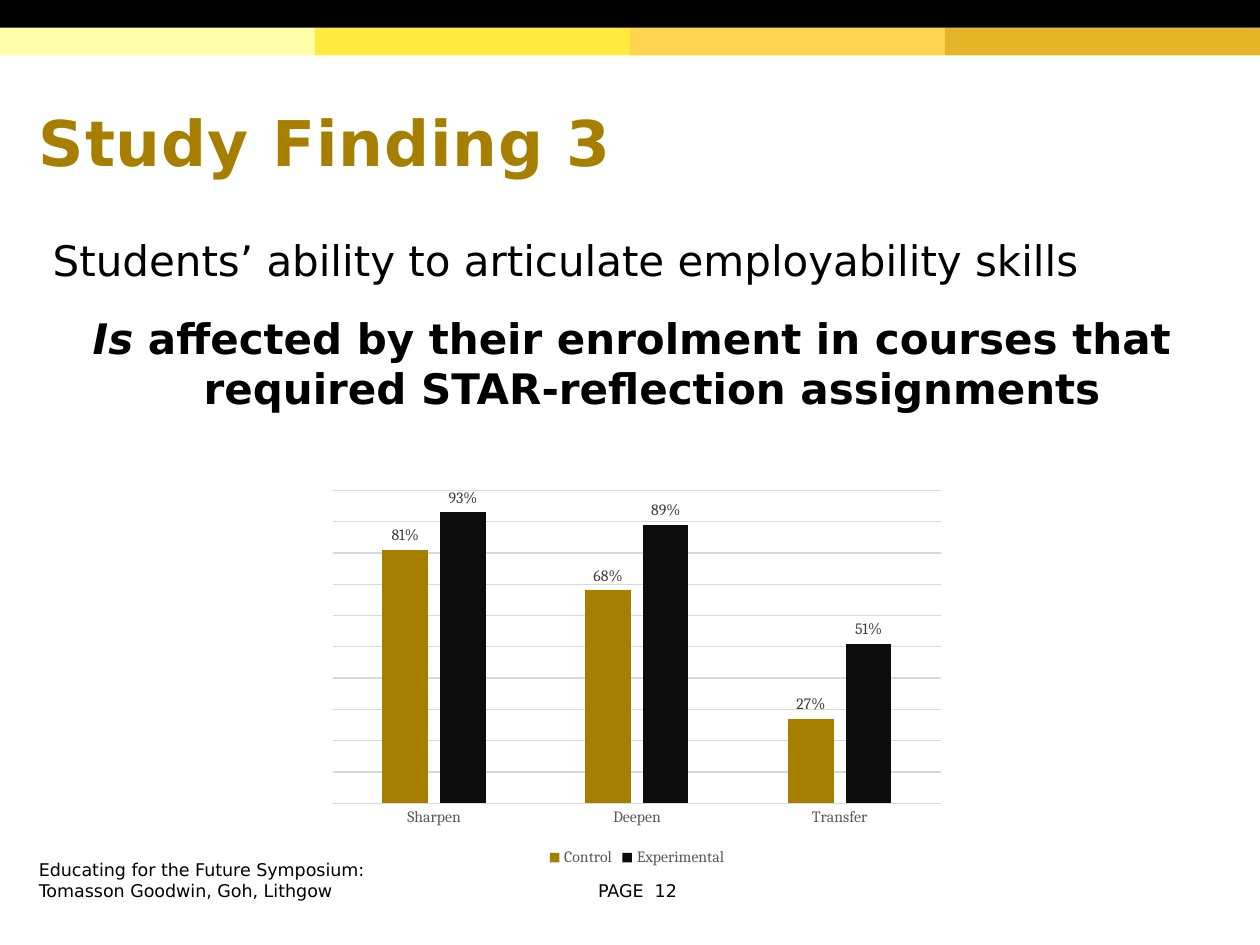
import pptx
import pptx.util
import pptx.chart.data
import pptx.dml.color
import pptx.enum.chart
import pptx.enum.shapes
import pptx.enum.text

# Content
TITLE = "Study Finding 3"
LEAD = "Students’ ability to articulate employability skills"
FINDING = ("Is", " affected by their enrolment in courses that "
           "required STAR-reflection assignments")
FOOTER = "Educating for the Future Symposium:\nTomasson Goodwin, Goh, Lithgow"
PAGE = "PAGE  12"
CATEGORIES = ["Sharpen", "Deepen", "Transfer"]
SERIES = [("Control", [0.81, 0.68, 0.27], "gold"),
          ("Experimental", [0.93, 0.89, 0.51], "ink")]
BANDS = ["band1", "band2", "band3", "band4"]
COLORS = {"black": "000000", "gold": "A77F00", "ink": "0C0C0C",
          "grid": "D9D9D9", "axis": "595959", "label": "404040",
          "band1": "FFFFAA", "band2": "FFEA3D",
          "band3": "FFD54F", "band4": "E4B429"}
FONT, CHART_FONT = "DejaVu Sans", "Cambria"
W, H, BAND = 10, 7.5, 0.22

Inches, Pt = pptx.util.Inches, pptx.util.Pt
ANCHOR = pptx.enum.text.MSO_ANCHOR
CENTER = pptx.enum.text.PP_ALIGN.CENTER
XL = pptx.enum.chart


def rgb(name):
    return pptx.dml.color.RGBColor.from_string(COLORS[name])


def style(font, size, color="black", name=FONT, bold=None):
    font.size, font.name, font.bold = Pt(size), name, bold
    font.color.rgb = rgb(color)


def bar(s, left, top, width, color):
    sp = s.shapes.add_shape(pptx.enum.shapes.MSO_SHAPE.RECTANGLE,
                            *map(Inches, (left, top, width, BAND)))
    sp.shadow.inherit = False
    sp.fill.solid()
    sp.fill.fore_color.rgb = rgb(color)
    sp.line.fill.background()


def text_box(s, box, text, size, color="black", bold=None,
             anchor=ANCHOR.MIDDLE):
    tf = s.shapes.add_textbox(*map(Inches, box)).text_frame
    tf.word_wrap, tf.vertical_anchor = True, anchor
    tf.text = text
    for p in tf.paragraphs:
        for r in p.runs:
            style(r.font, size, color, bold=bold)
    return tf


prs = pptx.Presentation()
prs.slide_width, prs.slide_height = Inches(W), Inches(H)
s = prs.slides.add_slide(prs.slide_layouts[6])

# Top bands
step = W / len(BANDS)
for i, color in enumerate(BANDS):
    bar(s, i * step, BAND, step, color)
bar(s, 0, 0, W, "black")

# Title
tf = text_box(s, (0.21, 0.47, 9.49, 1.34), TITLE, 36, "gold", True)
tf.margin_top = Inches(0.1)
p = tf.paragraphs[0]
p.line_spacing = 0.85
p.runs[0].font._element.set("spc", "50")

# Statement
tf = text_box(s, (0.32, 1.81, 9.39, 2.06), LEAD, 24, anchor=ANCHOR.TOP)
tf.paragraphs[0].space_after = Pt(8)
p = tf.add_paragraph()
p.alignment, p.space_before, p.space_after = CENTER, Pt(8), Pt(8)
pPr = p._p.get_or_add_pPr()
indent = Inches(0.32)
pPr.set("marL", str(indent))
pPr.set("indent", str(-indent))
for text, italic in zip(FINDING, (True, False)):
    r = p.add_run()
    r.text = text
    style(r.font, 24, bold=True)
    r.font.italic = italic

# Chart
data = pptx.chart.data.CategoryChartData(number_format="0%")
data.categories = CATEGORIES
for name, values, color in SERIES:
    data.add_series(name, values)
chart = s.shapes.add_chart(XL.XL_CHART_TYPE.COLUMN_CLUSTERED,
                           *map(Inches, (2.54, 3.83, 5.03, 3.09)), data).chart
style(chart.font, 10, name=CHART_FONT)
chart.has_title = False
chart.has_legend = True
chart.legend.position = XL.XL_LEGEND_POSITION.BOTTOM
chart.legend.include_in_layout = False
style(chart.legend.font, 9, "axis", CHART_FONT)

axis = chart.category_axis
axis.major_tick_mark = XL.XL_TICK_MARK.NONE
style(axis.tick_labels.font, 9, "axis", CHART_FONT)
values_axis = chart.value_axis
values_axis.visible = False
values_axis.minimum_scale, values_axis.maximum_scale = 0, 1
values_axis.major_unit = 0.1
values_axis.has_major_gridlines = True
for line in (axis.format.line, values_axis.major_gridlines.format.line):
    line.color.rgb, line.width = rgb("grid"), Pt(0.75)

plot = chart.plots[0]
plot.gap_width, plot.overlap, plot.vary_by_categories = 219, -27, False
for series, (name, values, color) in zip(plot.series, SERIES):
    series.format.fill.solid()
    series.format.fill.fore_color.rgb = rgb(color)
    labels = series.data_labels
    labels.show_value = True
    labels.position = XL.XL_LABEL_POSITION.OUTSIDE_END
    labels.number_format, labels.number_format_is_linked = "0%", False
    style(labels.font, 9, "label", CHART_FONT)

# Footer
text_box(s, (0.21, 6.85, 4.29, 0.27), FOOTER, 10)
text_box(s, (4.58, 6.93, 0.96, 0.27), PAGE, 10).paragraphs[0].alignment = CENTER

prs.save("out.pptx")
